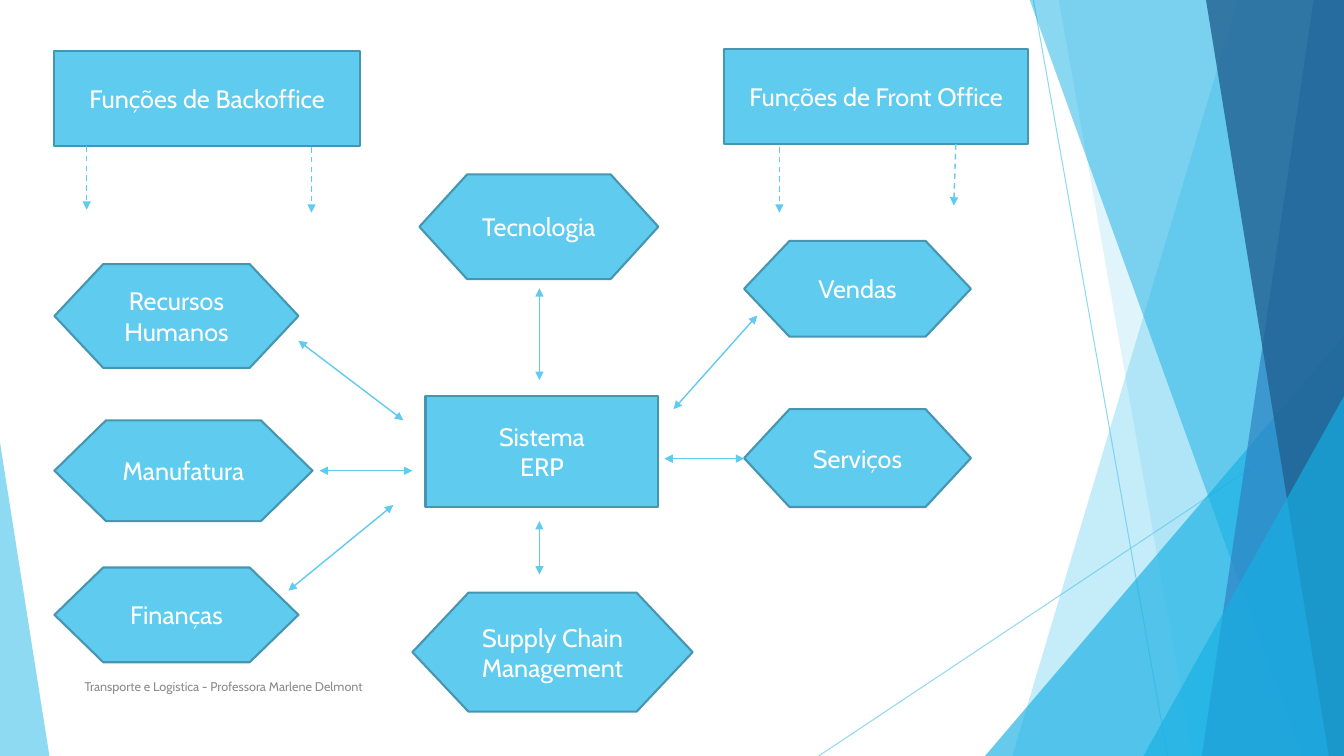
from pptx import Presentation
from pptx.dml.color import RGBColor
from pptx.enum.dml import MSO_LINE
from pptx.enum.shapes import MSO_CONNECTOR, MSO_SHAPE
from pptx.enum.text import MSO_ANCHOR, PP_ALIGN
from pptx.oxml.ns import qn
from pptx.util import Inches, Pt
from lxml.etree import SubElement

# Content: lengths in inches
WIDTH, HEIGHT = 13.33, 7.5
FONT = "Cabin"
SKY, AZURE, BLUE, NAVY = "5FCBEF", "17B0E4", "2E83C3", "226292"
EDGE, WHITE, GREY = "4696B1", "FFFFFF", "8C8C8C"
TOP = -0.01

THIN_LINES = [((10.25, 0), (11.58, HEIGHT)), ((WIDTH, 4.03), (8.12, HEIGHT))]

# Bands reach the right edge: top left x, bottom left x, colour, opacity
BACK_BANDS = [(12.28, 10.04, SKY, 36), (10.5, 11.83, SKY, 20)]
FRONT_BANDS = [
    (10.21, 12.91, AZURE, 50),
    (13.03, 11.92, BLUE, 70),
    (11.96, 13.18, NAVY, 80),
]

# Triangles stand on the bottom edge: left, top, width, apex, colour, opacity
BACK_TRIANGLE = (9.77, 3.33, 3.56, 1, AZURE, 66)
FRONT_TRIANGLES = [
    (11.34, 3.93, 1.99, 1, AZURE, 66),
    (0, 4.39, 0.49, 0, SKY, 70),
]

BOXES = [
    ("Funções de Backoffice", 0.54, 0.51, 3.03, 0.94),
    ("Funções de Front Office", 7.18, 0.49, 3.02, 0.94),
    ("Sistema\nERP", 4.22, 3.93, 2.31, 1.1),
]
HEXAGONS = [
    ("Tecnologia", 4.16, 1.73, 2.37, 1.04),
    ("Supply Chain Management", 4.09, 5.88, 2.78, 1.18),
    ("Serviços", 7.38, 4.06, 2.25, 0.97),
    ("Finanças", 0.54, 5.63, 2.42, 0.94),
    ("Manufatura", 0.54, 4.17, 2.56, 1),
    ("Vendas", 7.38, 2.39, 2.25, 0.95),
    ("Recursos Humanos", 0.54, 2.62, 2.42, 1.03),
]

DASHED_ARROWS = [
    ((0.86, 1.45), (0.86, 2.08)),
    ((3.09, 1.46), (3.09, 2.11)),
    ((7.73, 1.46), (7.73, 2.11)),
    ((9.48, 1.43), (9.46, 2.04)),
]
TWO_WAY_ARROWS = [
    ((5.35, 5.17), (5.35, 5.7)),
    ((2.96, 3.38), (4, 4.17)),
    ((3.17, 4.67), (4.09, 4.67)),
    ((2.86, 5.86), (3.9, 5.01)),
    ((6.59, 4.55), (7.38, 4.55)),
    ((7.51, 3.13), (6.68, 4.06)),
    ((5.35, 2.86), (5.35, 3.77)),
]
FOOTER = "Transporte e Logística - Professora Marlene Delmont"


def paint(fill, colour):
    fill.solid()
    fill.fore_color.rgb = RGBColor.from_string(colour)


def set_opacity(item, percent):
    colour = next(item.element.spPr.iter(qn("a:srgbClr")))
    SubElement(colour, qn("a:alpha"), val=str(percent * 1000))


def write(shape, text, size=18, colour=WHITE, align=PP_ALIGN.CENTER):
    frame = shape.text_frame
    frame.word_wrap = True
    frame.vertical_anchor = MSO_ANCHOR.MIDDLE
    for index, line in enumerate(text.split("\n")):
        para = frame.add_paragraph() if index else frame.paragraphs[0]
        para.alignment = align
        span = para.add_run()
        span.text = line
        span.font.name, span.font.size = FONT, Pt(size)
        paint(span.font.fill, colour)


def add_line(start, end, width=1, dashed=False, arrows=()):
    points = [Inches(value) for value in (*start, *end)]
    line = page.shapes.add_connector(MSO_CONNECTOR.STRAIGHT, *points)
    paint(line.line.fill, SKY)
    line.line.width = Pt(width)
    if dashed:
        line.line.dash_style = MSO_LINE.DASH
    outline = line.element.spPr.find(qn("a:ln"))
    for arrow in arrows:
        SubElement(outline, qn(f"a:{arrow}"), type="triangle")
    SubElement(line.element.spPr, qn("a:effectLst"))
    return line


def finish_facet(shape, colour, opacity):
    shape.shadow.inherit = False
    paint(shape.fill, colour)
    shape.line.fill.background()
    set_opacity(shape, opacity)


def add_band(top_x, bottom_x, colour, opacity):
    builder = page.shapes.build_freeform(Inches(top_x), Inches(TOP))
    corners = [(WIDTH, TOP), (WIDTH, HEIGHT), (bottom_x, HEIGHT)]
    builder.add_line_segments([(Inches(x), Inches(y)) for x, y in corners])
    finish_facet(builder.convert_to_shape(), colour, opacity)


def add_triangle(left, top, width, apex, colour, opacity):
    place = [Inches(value) for value in (left, top, width, HEIGHT - top)]
    shape = page.shapes.add_shape(MSO_SHAPE.ISOSCELES_TRIANGLE, *place)
    shape.adjustments[0] = apex
    finish_facet(shape, colour, opacity)


def add_node(kind, text, *place):
    shape = page.shapes.add_shape(kind, *[Inches(value) for value in place])
    shape.shadow.inherit = False
    paint(shape.fill, SKY)
    paint(shape.line.fill, EDGE)
    shape.line.width = Pt(1.5)
    write(shape, text)


deck = Presentation()
deck.slide_width, deck.slide_height = Inches(WIDTH), Inches(HEIGHT)
page = deck.slides.add_slide(deck.slide_layouts[6])

# Background facets
for start, end in THIN_LINES:
    set_opacity(add_line(start, end, width=0.75), 70)
for band in BACK_BANDS:
    add_band(*band)
add_triangle(*BACK_TRIANGLE)
for band in FRONT_BANDS:
    add_band(*band)
for triangle in FRONT_TRIANGLES:
    add_triangle(*triangle)

# Diagram nodes
for box in BOXES:
    add_node(MSO_SHAPE.FLOWCHART_PROCESS, *box)
for hexagon in HEXAGONS:
    add_node(MSO_SHAPE.FLOWCHART_PREPARATION, *hexagon)

# Arrows
for start, end in DASHED_ARROWS:
    add_line(start, end, dashed=True, arrows=["tailEnd"])
for start, end in TWO_WAY_ARROWS:
    add_line(start, end, arrows=["headEnd", "tailEnd"])

# Footer
footer = page.shapes.add_textbox(Inches(0.74), Inches(6.61), Inches(6.89), Inches(0.4))
write(footer, FOOTER, size=9, colour=GREY, align=PP_ALIGN.LEFT)

deck.save("out.pptx")
